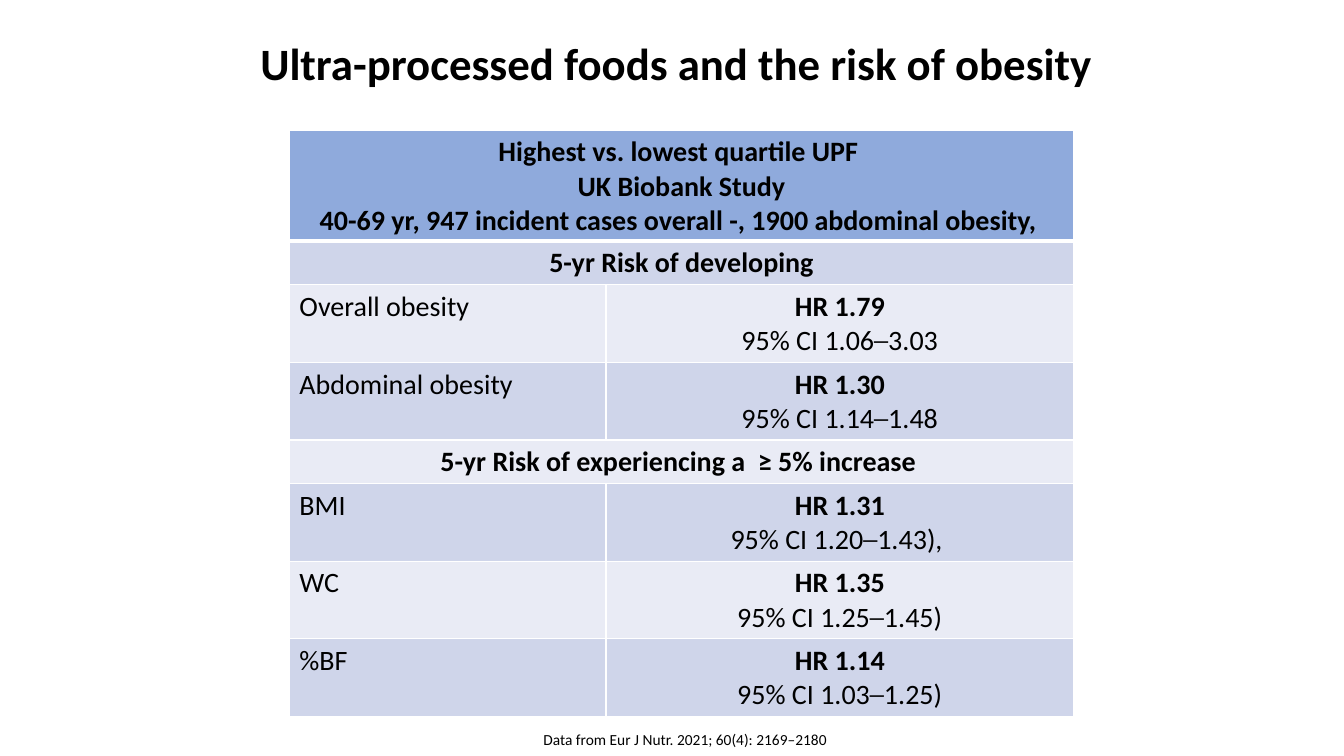
from lxml import etree
from pptx import Presentation
from pptx.dml.color import RGBColor
from pptx.enum import text
from pptx.oxml import ns
from pptx.util import Inches, Pt

# Content
TITLE = "Ultra-processed foods and the risk of obesity "
SOURCE = "Data from Eur J Nutr. 2021; 60(4): 2169–2180"
HEADER = [
    "Highest vs. lowest quartile UPF ",
    "UK Biobank Study",
    "40-69 yr, 947 incident cases overall -, 1900 abdominal obesity, ",
]
# One entry is a full-width heading; three are outcome, hazard ratio, interval
ROWS = [
    ("5-yr Risk of developing",),
    ("Overall obesity", "HR 1.79", "95% CI 1.06─3.03"),
    ("Abdominal obesity", "HR 1.30", "95% CI 1.14─1.48"),
    ("5-yr Risk of experiencing a  ≥ 5% increase ",),
    ("BMI", "HR 1.31", "95% CI 1.20─1.43), "),
    ("WC", "HR 1.35", "95% CI 1.25─1.45)"),
    ("%BF", "HR 1.14", "95% CI 1.03─1.25)"),
]
COLORS = {"text": "000000", "header": "8FAADC", "dark": "CFD5EA",
          "light": "E9EBF5", "border": "FFFFFF"}
COLUMN_WIDTHS = (3.14, 4.64)
HEADER_HEIGHT, HEADING_HEIGHT, RESULT_HEIGHT = 1.1, 0.43, 0.77


def write(frame, lines, size=20, bold=(True,), center=True):
    """Fill a text frame; the last bold flag also covers any further lines."""
    for i, line in enumerate(lines):
        paragraph = frame.paragraphs[0] if i == 0 else frame.add_paragraph()
        paragraph.alignment = text.PP_ALIGN.CENTER if center else text.PP_ALIGN.LEFT
        run = paragraph.add_run()
        run.text = line
        run.font.name = "Calibri"
        run.font.size = Pt(size)
        run.font.bold = bold[min(i, len(bold) - 1)]
        run.font.color.rgb = RGBColor.from_string(COLORS["text"])


def add_label(slide, box, line, **style):
    label = slide.shapes.add_textbox(*map(Inches, box)).text_frame
    label.word_wrap = True
    write(label, [line], **style)


def style_cell(cell, fill, top=1, bottom=1):
    cell.fill.solid()
    cell.fill.fore_color.rgb = RGBColor.from_string(COLORS[fill])
    properties = cell._tc.get_or_add_tcPr()
    widths = {"a:lnL": 1, "a:lnR": 1, "a:lnT": top, "a:lnB": bottom}
    for i, (side, width) in enumerate(widths.items()):
        line = etree.Element(ns.qn(side), w=str(Pt(width)))
        solid = etree.SubElement(line, ns.qn("a:solidFill"))
        etree.SubElement(solid, ns.qn("a:srgbClr"), val=COLORS["border"])
        properties.insert(i, line)


def add_results(slide):
    heights = [HEADER_HEIGHT] + [
        HEADING_HEIGHT if len(row) == 1 else RESULT_HEIGHT for row in ROWS]
    results = slide.shapes.add_table(
        len(heights), len(COLUMN_WIDTHS), Inches(2.87), Inches(1.29),
        Inches(sum(COLUMN_WIDTHS)), Inches(sum(heights))).table
    for column, width in zip(results.columns, COLUMN_WIDTHS):
        column.width = Inches(width)
    for row, height in zip(results.rows, heights):
        row.height = Inches(height)

    # Header and alternating bands
    for i in range(len(heights)):
        fill = "header" if i == 0 else "dark" if i % 2 else "light"
        for cell in results.rows[i].cells:
            style_cell(cell, fill, top=3 if i == 1 else 1, bottom=3 if i == 0 else 1)

    # Wording
    results.cell(0, 0).merge(results.cell(0, 1))
    write(results.cell(0, 0).text_frame, HEADER)
    for i, (outcome, *risk) in enumerate(ROWS, start=1):
        first, second = results.cell(i, 0), results.cell(i, 1)
        if risk:
            write(first.text_frame, [outcome], bold=(False,), center=False)
            write(second.text_frame, risk, bold=(True, False))
        else:
            first.merge(second)
            write(first.text_frame, [outcome])


def main():
    deck = Presentation()
    deck.slide_width, deck.slide_height = Inches(13.33), Inches(7.5)
    slide = deck.slides.add_slide(deck.slide_layouts[6])
    add_label(slide, (5.29, 7.19, 4.02, 0.29), SOURCE,
              size=11, bold=(False,), center=False)
    add_label(slide, (1.12, 0.31, 11.28, 0.64), TITLE, size=32)
    add_results(slide)
    deck.save("out.pptx")


if __name__ == "__main__":
    main()
